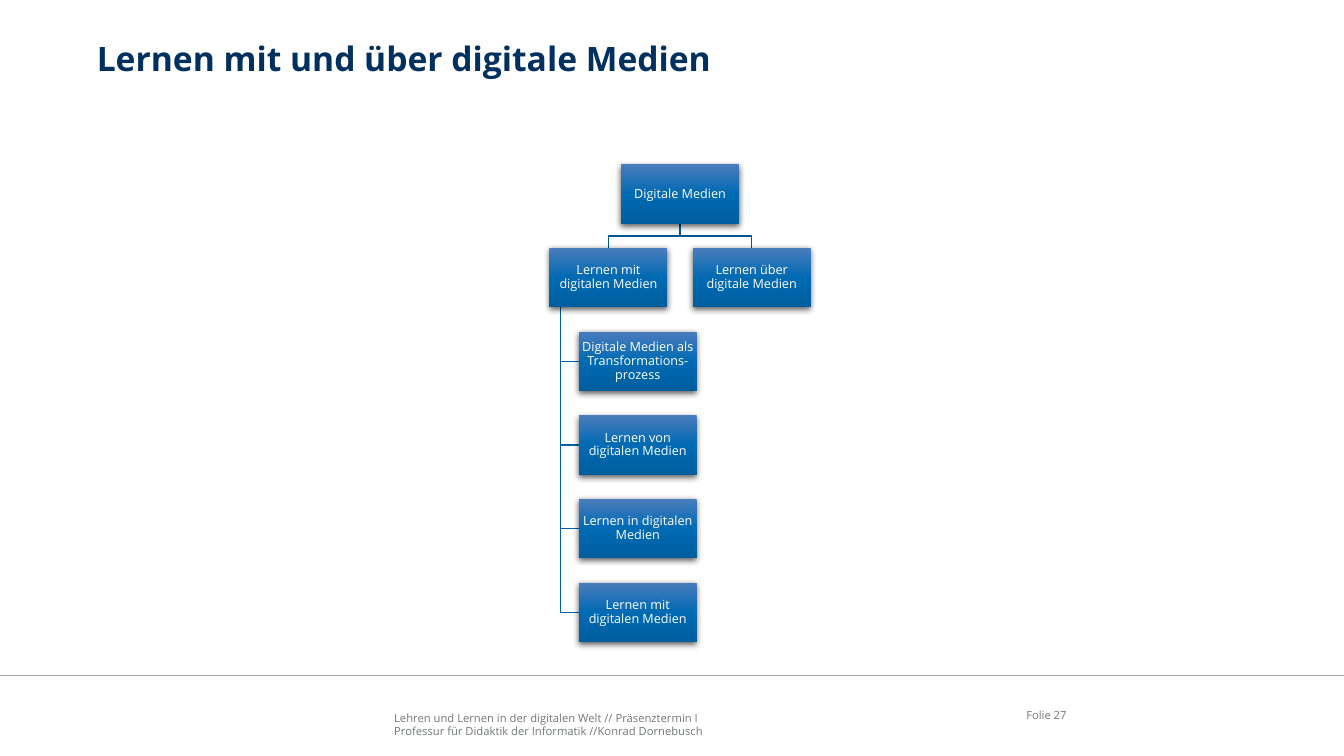
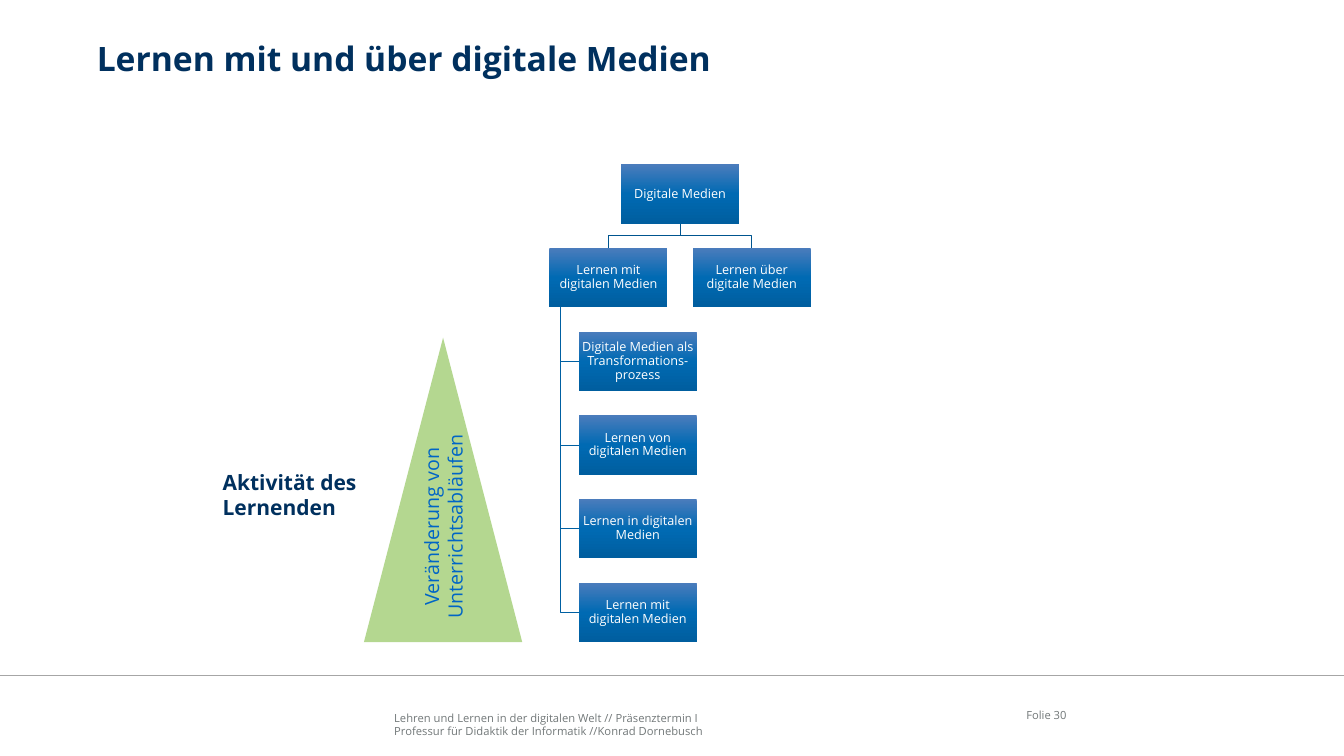
from copy import deepcopy
from dataclasses import dataclass

from lxml.etree import SubElement
from pptx import Presentation
from pptx.dml.color import RGBColor
from pptx.enum.shapes import MSO_CONNECTOR, MSO_SHAPE
from pptx.enum.text import MSO_ANCHOR, MSO_AUTO_SIZE, PP_ALIGN
from pptx.oxml.ns import qn
from pptx.util import Inches, Pt


@dataclass(frozen=True)
class Theme:
    font: str = "Open Sans"
    navy: str = "00305E"
    gray: str = "727879"
    rule: str = "A6A6A6"
    white: str = "FFFFFF"
    green: str = "6AB023"
    blue: str = "0065C6"
    upper_branch: str = "00558F"
    lower_branch: str = "0060A2"
    box_gradient: tuple = ("4B7CBC", "006AB3", "005E9F")
    title_size: int = 24
    activity_size: int = 15
    change_size: int = 14
    box_size: int = 9
    footer_size: int = 8


theme = Theme()


def write_text(shape, text, size, color, align=PP_ALIGN.LEFT, anchor=MSO_ANCHOR.TOP,
               inset=0.0, bold=False, line_spacing=None):
    frame = shape.text_frame
    frame.text = text
    frame.word_wrap = True
    frame.auto_size = MSO_AUTO_SIZE.NONE
    frame.vertical_anchor = anchor
    frame.margin_left = frame.margin_right = Inches(inset)
    frame.margin_top = frame.margin_bottom = Inches(inset)
    for paragraph in frame.paragraphs:
        paragraph.alignment = align
        paragraph.line_spacing = line_spacing
        for run in paragraph.runs:
            run.font.name = theme.font
            run.font.size = Pt(size)
            run.font.bold = bold
            run.font.color.rgb = RGBColor.from_string(color)


def add_branch(slide, points, color, width):
    corners = [(Inches(x), Inches(y)) for x, y in points]
    builder = slide.shapes.build_freeform(*corners[0])
    builder.add_line_segments(corners[1:], close=False)
    branch = builder.convert_to_shape()
    branch.shadow.inherit = False
    branch.fill.background()
    branch.line.color.rgb = RGBColor.from_string(color)
    branch.line.width = Pt(width)


presentation = Presentation()
presentation.slide_width = Inches(13.33)
presentation.slide_height = Inches(7.5)
title_only = presentation.slide_layouts[5]

title_text = "Lernen mit und über digitale Medien"
footer_text = ("Lehren und Lernen in der digitalen Welt // Präsenztermin I\n"
               "Professur für Didaktik der Informatik //Konrad Dornebusch")

box_width, box_height = 1.17, 0.59
first_top, row_pitch = 1.63, 0.83
left_column, right_column, child_column = 5.45, 6.87, 5.74
root_column = (left_column + right_column) / 2
trunk_x = left_column + 0.11
boxes = [
    ("Digitale Medien", root_column, 0),
    ("Lernen mit digitalen Medien", left_column, 1),
    ("Lernen über digitale Medien", right_column, 1),
    ("Digitale Medien als Transformations-prozess", child_column, 2),
    ("Lernen von digitalen Medien", child_column, 3),
    ("Lernen in digitalen Medien", child_column, 4),
    ("Lernen mit digitalen Medien", child_column, 5),
]

for number, branch_width, has_shadow in ((27, 1, True), (30, 0.5, False)):
    slide = presentation.slides.add_slide(title_only)

    title = slide.shapes.title
    title.left, title.top = Inches(0.96), Inches(0.38)
    title.width, title.height = Inches(11.57), Inches(0.75)
    write_text(title, title_text, theme.title_size, theme.navy, bold=True)

    rule = slide.shapes.add_connector(
        MSO_CONNECTOR.STRAIGHT, 0, Inches(6.7), presentation.slide_width, Inches(6.7))
    rule.line.color.rgb = RGBColor.from_string(theme.rule)
    rule.line.width = Pt(1)
    SubElement(rule._element.spPr, qn("a:effectLst"))

    footer = slide.shapes.add_textbox(Inches(3.91), Inches(7.02), Inches(5.67), Inches(0.3))
    write_text(footer, footer_text, theme.footer_size, theme.gray, anchor=MSO_ANCHOR.BOTTOM)
    page = slide.shapes.add_textbox(Inches(9.81), Inches(7.03), Inches(0.77), Inches(0.15))
    write_text(page, f"Folie {number}", theme.footer_size, theme.gray, PP_ALIGN.RIGHT)

    for text, column, row in boxes[1:]:
        top = first_top + row * row_pitch
        center = column + box_width / 2
        if row == 1:
            root_center = root_column + box_width / 2
            root_bottom = first_top + box_height
            middle = (root_bottom + top) / 2
            points = [(root_center, root_bottom), (root_center, middle),
                      (center, middle), (center, top)]
            color = theme.upper_branch
        else:
            level = top + box_height / 2
            points = [(trunk_x, first_top + row_pitch + box_height),
                      (trunk_x, level), (column, level)]
            color = theme.lower_branch
        add_branch(slide, points, color, branch_width)

    for text, column, row in boxes:
        box = slide.shapes.add_shape(
            MSO_SHAPE.RECTANGLE, Inches(column), Inches(first_top + row * row_pitch),
            Inches(box_width), Inches(box_height))
        box.line.fill.background()
        box.fill.gradient()
        box.fill.gradient_angle = 270
        stop_list = box._element.spPr.find(qn("a:gradFill")).find(qn("a:gsLst"))
        stop_list.append(deepcopy(stop_list[0]))
        for index, stop in enumerate(box.fill.gradient_stops):
            stop.position = index / 2
            stop.color.rgb = RGBColor.from_string(theme.box_gradient[index])
        box.shadow.inherit = False
        if has_shadow:
            effects = box._element.spPr.find(qn("a:effectLst"))
            shadow = SubElement(effects, qn("a:outerShdw"), blurRad=str(Pt(4.5)),
                                dist=str(Pt(1.5)), dir="5400000", rotWithShape="0")
            shadow_color = SubElement(shadow, qn("a:srgbClr"), val="000000")
            SubElement(shadow_color, qn("a:alpha"), val="63000")
        write_text(box, text, theme.box_size, theme.white, PP_ALIGN.CENTER,
                   MSO_ANCHOR.MIDDLE, inset=0.01, line_spacing=0.9)

triangle = slide.shapes.add_shape(
    MSO_SHAPE.ISOSCELES_TRIANGLE, Inches(3.61), Inches(3.35), Inches(1.57), Inches(3.02))
triangle.shadow.inherit = False
triangle.line.fill.background()
triangle.fill.solid()
triangle.fill.fore_color.rgb = RGBColor.from_string(theme.green)
triangle_color = triangle._element.spPr.find(qn("a:solidFill")).find(qn("a:srgbClr"))
SubElement(triangle_color, qn("a:alpha"), val="50000")

change = slide.shapes.add_textbox(Inches(3.13), Inches(4.76), Inches(2.53), Inches(0.93))
change.rotation = 270
write_text(change, "Veränderung von Unterrichtsabläufen", theme.change_size, theme.blue,
           PP_ALIGN.CENTER, MSO_ANCHOR.MIDDLE, inset=0.1)

activity = slide.shapes.add_textbox(Inches(2.11), Inches(4.56), Inches(1.62), Inches(0.71))
write_text(activity, "Aktivität des Lernenden", theme.activity_size, theme.navy,
           inset=0.1, bold=True)

presentation.save("out.pptx")
